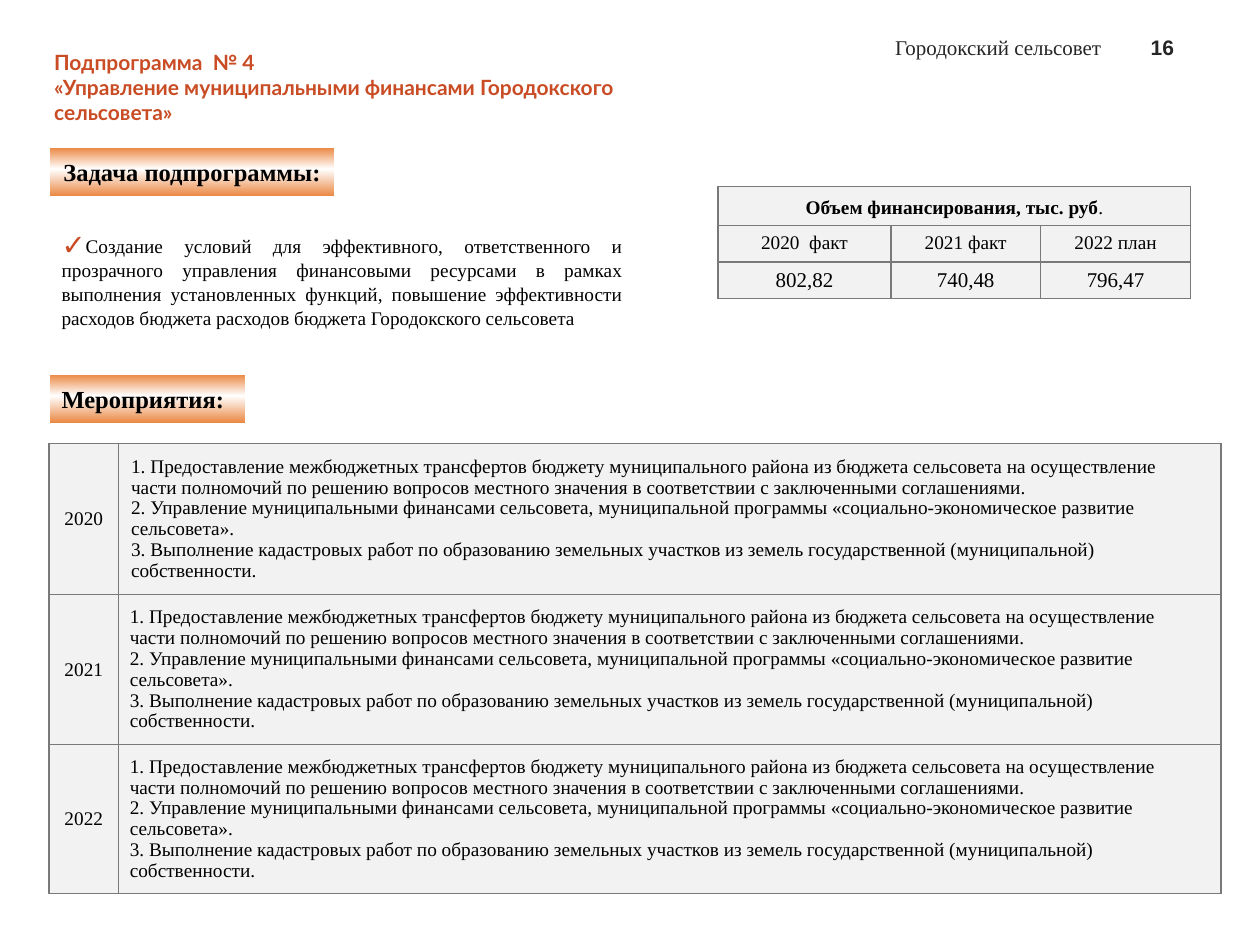
import copy

import pptx
import pptx.dml.color
import pptx.enum.shapes
import pptx.enum.text
import pptx.oxml
import pptx.oxml.ns
import pptx.util

Inches, Pt = pptx.util.Inches, pptx.util.Pt
RGBColor = pptx.dml.color.RGBColor
ALIGN, ANCHOR = pptx.enum.text.PP_ALIGN, pptx.enum.text.MSO_ANCHOR

# Content
TITLE = ["Подпрограмма  № 4", "«Управление муниципальными финансами Городокского сельсовета»"]
COUNCIL, PAGE_NUMBER = "Городокский сельсовет", "16"
TASK = ("Создание условий для эффективного, ответственного и прозрачного управления "
        "финансовыми ресурсами в рамках выполнения установленных функций, повышение "
        "эффективности расходов бюджета расходов бюджета Городокского сельсовета")
FUNDING_HEAD = "Объем финансирования, тыс. руб"
FUNDING = [("2020  факт", "802,82"), ("2021 факт", "740,48"), ("2022 план", "796,47")]
YEARS = ["2020", "2021", "2022"]
ACTIVITIES = [
    "1. Предоставление межбюджетных трансфертов бюджету муниципального района из бюджета сельсовета на осуществление ",
    "части полномочий по решению вопросов местного значения в соответствии с заключенными соглашениями. ",
    "2. Управление муниципальными финансами сельсовета, муниципальной программы «социально-экономическое развитие ",
    "сельсовета».",
    "3. Выполнение кадастровых работ по образованию земельных участков из земель государственной (муниципальной) ",
    "собственности. ",
]

# Style
SERIF, SANS, HEAD = "Times New Roman", "Arial", "Lato"
RUST = RGBColor(0xC9, 0x4C, 0x25)
ORANGE = RGBColor(0xEA, 0x86, 0x40)
WHITE = RGBColor(0xFF, 0xFF, 0xFF)
BLACK = RGBColor(0, 0, 0)
DARK = RGBColor(0x26, 0x26, 0x26)
PALE = RGBColor(0xF2, 0xF2, 0xF2)
GRAY = RGBColor(0x79, 0x79, 0x79)
LEFT = 0.39
HANG = 0.38


def add_span(para, text, size=11, font=SERIF, color=BLACK, bold=False):
    span = para.add_run()
    span.text = text
    span.font.size, span.font.name, span.font.bold = Pt(size), font, bold
    span.font.color.rgb = color


def add_text(slide, area, text, align, anchor, **style):
    box = slide.shapes.add_textbox(*map(Inches, area))
    frame = box.text_frame
    frame.word_wrap, frame.vertical_anchor = True, anchor
    para = frame.paragraphs[0]
    para.alignment = align
    add_span(para, text, **style)
    return para


def add_banner(slide, top, width, text, align):
    banner = slide.shapes.add_shape(pptx.enum.shapes.MSO_SHAPE.PENTAGON,
                                    *map(Inches, (LEFT, top, width, 0.39)))
    banner.adjustments[0] = 0
    banner.shadow.inherit = False
    banner.line.color.rgb, banner.line.width = WHITE, Pt(0.75)
    banner.fill.gradient()
    banner.fill.gradient_angle = 270
    first = banner.fill._xPr.find(".//" + pptx.oxml.ns.qn("a:gs"))
    first.addnext(copy.deepcopy(first))
    colors = [(0, ORANGE), (0.44, WHITE), (1, ORANGE)]
    for stop, (position, color) in zip(banner.fill.gradient_stops, colors):
        stop.position, stop.color.rgb = position, color
    frame = banner.text_frame
    frame.word_wrap, frame.vertical_anchor = True, ANCHOR.MIDDLE
    frame.paragraphs[0].alignment = align
    add_span(frame.paragraphs[0], text, size=14, bold=True)


def add_grid(slide, left, top, columns, rows):
    table = slide.shapes.add_table(len(rows), len(columns), *map(
        Inches, (left, top, sum(columns), sum(rows)))).table
    for column, width in zip(table.columns, columns):
        column.width = Inches(width)
    for row, height in zip(table.rows, rows):
        row.height = Inches(height)
    for cell in table.iter_cells():
        cell.fill.solid()
        cell.fill.fore_color.rgb = PALE
        for index, side in enumerate("LRTB"):
            cell._tc.tcPr.insert(index, pptx.oxml.parse_xml(
                f'<a:ln{side} {pptx.oxml.ns.nsdecls("a")} w="{Pt(1)}"><a:solidFill>'
                f'<a:srgbClr val="{GRAY}"/></a:solidFill></a:ln{side}>'))
    return table


def fill_cell(cell, lines, align, anchor, margin=0.1, size=11, bold=False, hang=0):
    cell.vertical_anchor = anchor
    cell.margin_left = cell.margin_right = Inches(margin)
    cell.margin_top = cell.margin_bottom = Inches(margin / 2)
    for index, line in enumerate(lines):
        para = cell.text_frame.paragraphs[0] if index == 0 else cell.text_frame.add_paragraph()
        para.alignment = align
        if hang:
            para.line_spacing = 0.97
            properties = para._p.get_or_add_pPr()
            properties.set("marL", str(Inches(hang)))
            properties.set("indent", str(-Inches(hang)))
        add_span(para, line, size=size, bold=bold)


deck = pptx.Presentation()
deck.slide_width, deck.slide_height = Inches(10), Inches(7.5)
slide = deck.slides.add_slide(deck.slide_layouts[5])

# Title
title = slide.shapes.title
title.left, title.top, title.width, title.height = map(Inches, (0.23, 0.36, 4.69, 0.66))
frame = title.text_frame
frame.auto_size = pptx.enum.text.MSO_AUTO_SIZE.NONE
frame.word_wrap, frame.vertical_anchor = True, ANCHOR.MIDDLE
frame.margin_left = frame.margin_right = 0
para = frame.paragraphs[0]
para.alignment = ALIGN.LEFT
para._p.get_or_add_pPr().set("marL", str(Inches(0.2)))
add_span(para, TITLE[0], 12, HEAD, RUST, True)
para.add_line_break()
add_span(para, TITLE[1], 12, HEAD, RUST, True)

# Page header
add_text(slide, (6.42, 0.19, 2.42, 0.33), COUNCIL, ALIGN.RIGHT, ANCHOR.BOTTOM,
         size=12, color=DARK)
add_text(slide, (8.95, 0.19, 0.55, 0.33), PAGE_NUMBER, ALIGN.CENTER, ANCHOR.BOTTOM,
         size=12, font=SANS, color=DARK, bold=True)

# Task with a check mark
add_banner(slide, 1.17, 2.27, "Задача подпрограммы:", ALIGN.CENTER)
task = add_text(slide, (LEFT, 1.72, 4.65, 1.03), TASK, ALIGN.JUSTIFY, ANCHOR.MIDDLE)
task.line_spacing = 1.04
for mark in (f'<a:buClr {{}}><a:srgbClr val="{RUST}"/></a:buClr>',
             '<a:buSzPct {} val="150000"/>',
             f'<a:buFont {{}} typeface="{SANS}"/>',
             '<a:buChar {} char="✓"/>'):
    task._p.pPr.append(pptx.oxml.parse_xml(mark.format(pptx.oxml.ns.nsdecls("a"))))

# Funding table
funding = add_grid(slide, 5.7, 1.48, [1.37, 1.19, 1.19], [0.31, 0.29, 0.28])
head = funding.cell(0, 0)
head.merge(funding.cell(0, 2))
fill_cell(head, [FUNDING_HEAD], ALIGN.CENTER, ANCHOR.BOTTOM, bold=True)
add_span(head.text_frame.paragraphs[0], ".")
for column, (year, amount) in enumerate(FUNDING):
    fill_cell(funding.cell(1, column), [year], ALIGN.CENTER, ANCHOR.TOP)
    fill_cell(funding.cell(2, column), [amount], ALIGN.CENTER, ANCHOR.MIDDLE, 0.09, 12)

# Activities by year
add_banner(slide, 2.97, 1.56, "Мероприятия:", ALIGN.LEFT)
plan = add_grid(slide, LEFT, 3.52, [0.55, 8.75], [1.2, 1.19, 1.18])
for row, year in enumerate(YEARS):
    margin = 0.1 if row == 0 else 0.09
    fill_cell(plan.cell(row, 0), [year], ALIGN.CENTER, ANCHOR.MIDDLE, margin)
    fill_cell(plan.cell(row, 1), ACTIVITIES, ALIGN.JUSTIFY, ANCHOR.MIDDLE, margin, hang=HANG)

deck.save("out.pptx")
